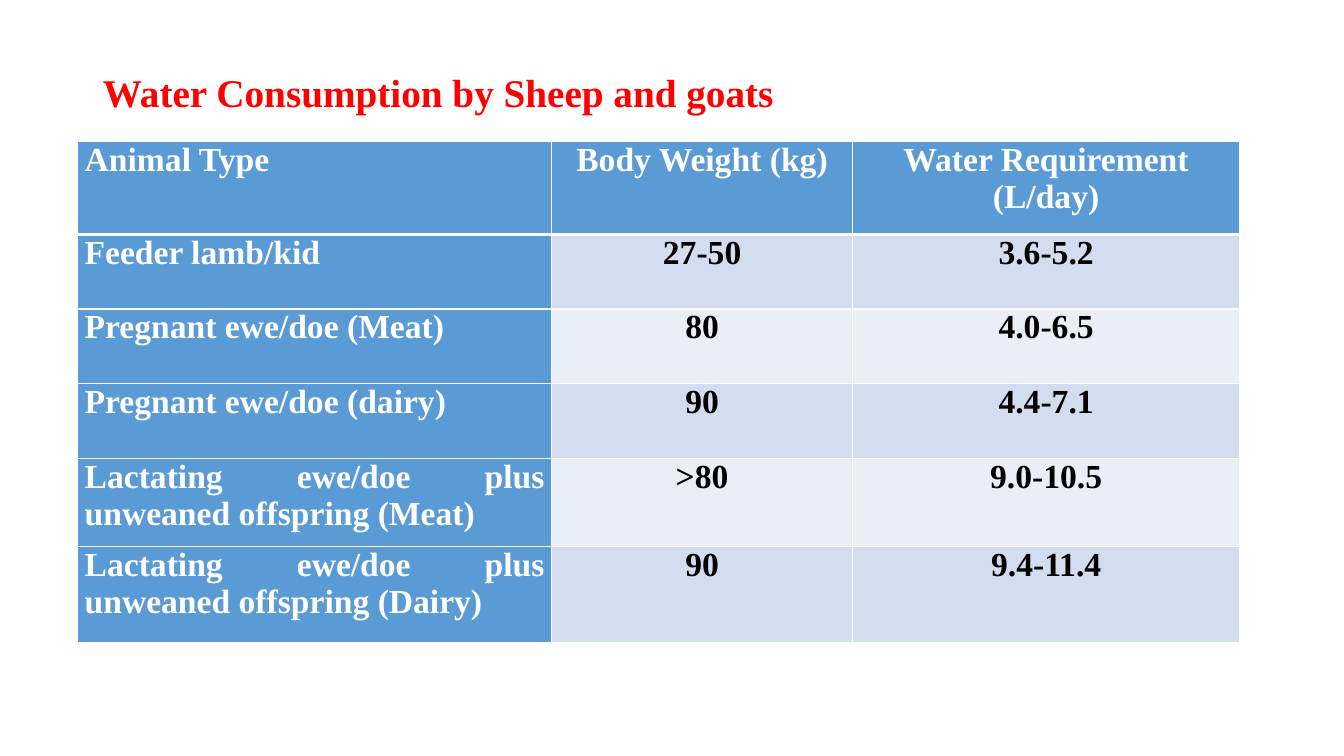
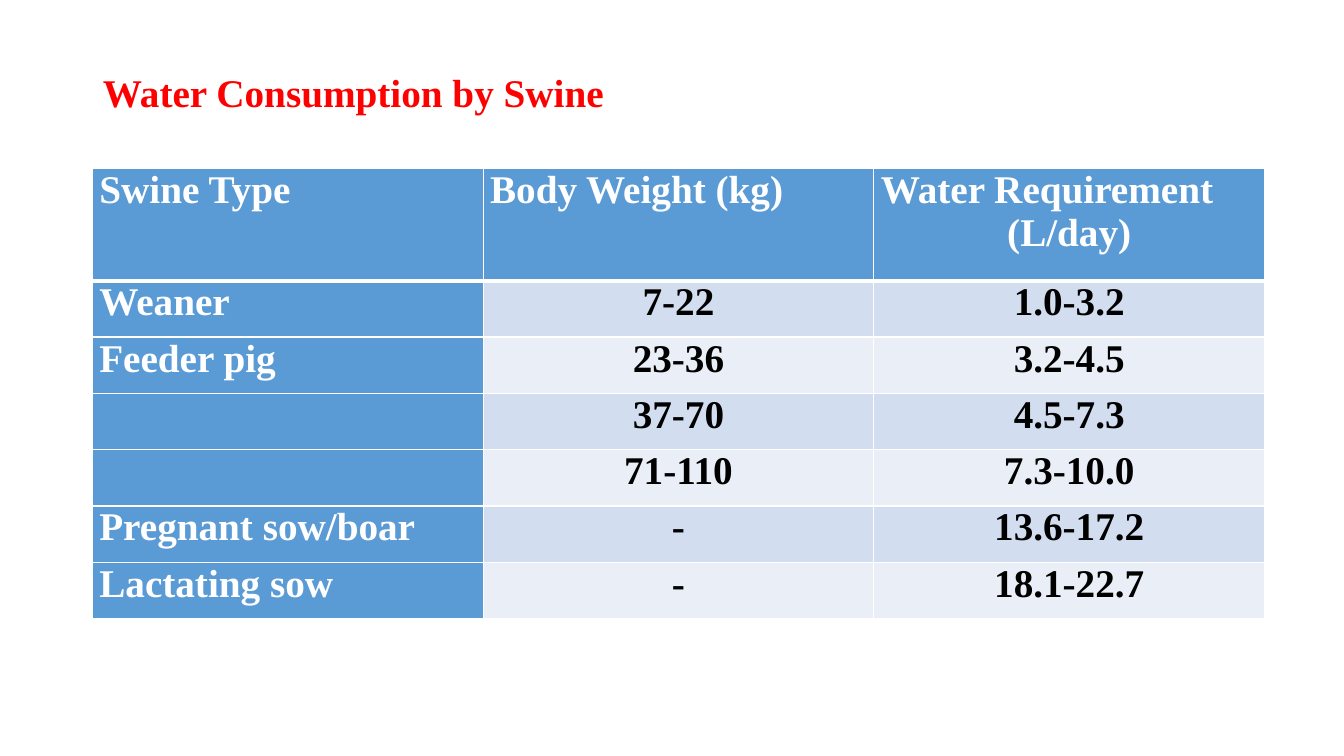
from lxml import etree
from pptx import Presentation
from pptx.dml.color import RGBColor
from pptx.enum.text import PP_ALIGN
from pptx.oxml.ns import qn
from pptx.util import Pt

CENTER = PP_ALIGN.CENTER
JUSTIFY = PP_ALIGN.JUSTIFY
FONT = "Times New Roman"
COLORS = {
    "title": "FF0000",
    "header": "5B9BD5",
    "header_text": "FFFFFF",
    "body_text": "000000",
    "band_dark": "D2DEEF",
    "band_light": "EAEFF7",
    "border": "FFFFFF",
}

SLIDES = [
    {
        "title": "Water Consumption by Sheep and goats",
        "left": 55.5,
        "top": 101,
        "size": 24,
        "columns": [338.5, 215, 276.5],
        "heights": [66.5, 53.3, 53.3, 53.3, 63.2, 68.4],
        "header_aligns": [[JUSTIFY], [CENTER], [CENTER, CENTER]],
        "rows": [
            ["Animal Type", "Body Weight (kg)", "Water Requirement\n(L/day)"],
            ["Feeder lamb/kid", "27-50", "3.6-5.2"],
            ["Pregnant ewe/doe (Meat)", "80", "4.0-6.5"],
            ["Pregnant ewe/doe (dairy)", "90", "4.4-7.1"],
            ["Lactating ewe/doe plus unweaned offspring (Meat)", ">80", "9.0-10.5"],
            ["Lactating ewe/doe plus unweaned offspring (Dairy)", "90", "9.4-11.4"],
        ],
    },
    {
        "title": "Water Consumption by Swine",
        "left": 66,
        "top": 120.2,
        "size": 28,
        "columns": [279.1] * 3,
        "heights": [80.4] + [40.2] * 6,
        "header_aligns": [[JUSTIFY], [JUSTIFY], [JUSTIFY, CENTER]],
        "rows": [
            ["Swine Type", "Body Weight (kg)", "Water Requirement\n(L/day)"],
            ["Weaner", "7-22", "1.0-3.2"],
            ["Feeder pig", "23-36", "3.2-4.5"],
            ["", "37-70", "4.5-7.3"],
            ["", "71-110", "7.3-10.0"],
            ["Pregnant sow/boar", "-", "13.6-17.2"],
            ["Lactating sow", "-", "18.1-22.7"],
        ],
    },
]


def style_paragraph(paragraph, size, color, align):
    paragraph.alignment = align
    paragraph.font.name = FONT
    paragraph.font.size = Pt(size)
    paragraph.font.bold = True
    paragraph.font.color.rgb = RGBColor.from_string(COLORS[color])


def add_borders(cell, widths):
    properties = cell._tc.get_or_add_tcPr()
    for side, width in widths.items():
        line = etree.SubElement(properties, qn(f"a:ln{side}"), w=str(Pt(width)))
        fill = etree.SubElement(line, qn("a:solidFill"))
        etree.SubElement(fill, qn("a:srgbClr"), val=COLORS["border"])


prs = Presentation()
prs.slide_width = Pt(960)
prs.slide_height = Pt(540)

for content in SLIDES:
    slide = prs.slides.add_slide(prs.slide_layouts[6])
    title = slide.shapes.add_textbox(Pt(66.5), Pt(49), Pt(869), Pt(40)).text_frame
    title.word_wrap = True
    title.text = content["title"]
    style_paragraph(title.paragraphs[0], 28, "title", JUSTIFY)
    title.paragraphs[0].line_spacing = 0.9

    rows, columns, heights = content["rows"], content["columns"], content["heights"]
    table = slide.shapes.add_table(
        len(rows), len(columns), Pt(content["left"]), Pt(content["top"]),
        Pt(sum(columns)), Pt(sum(heights)),
    ).table
    table.first_col = True
    for column, width in zip(table.columns, columns):
        column.width = Pt(width)

    for r, (row, height) in enumerate(zip(rows, heights)):
        table.rows[r].height = Pt(height)
        for c, text in enumerate(row):
            cell = table.cell(r, c)
            cell.margin_left = cell.margin_right = Pt(5)
            cell.margin_top = cell.margin_bottom = Pt(0)
            add_borders(cell, {"L": 1, "R": 1, "T": 3 if r == 1 else 1, "B": 3 if r == 0 else 1})

            is_header = r == 0 or c == 0
            band = "band_dark" if r % 2 else "band_light"
            cell.fill.solid()
            cell.fill.fore_color.rgb = RGBColor.from_string(COLORS["header" if is_header else band])

            cell.text = text
            aligns = content["header_aligns"][c] if r == 0 else [CENTER if c else JUSTIFY]
            for paragraph, align in zip(cell.text_frame.paragraphs, aligns):
                style_paragraph(
                    paragraph, content["size"], "header_text" if is_header else "body_text", align
                )

prs.save("out.pptx")
